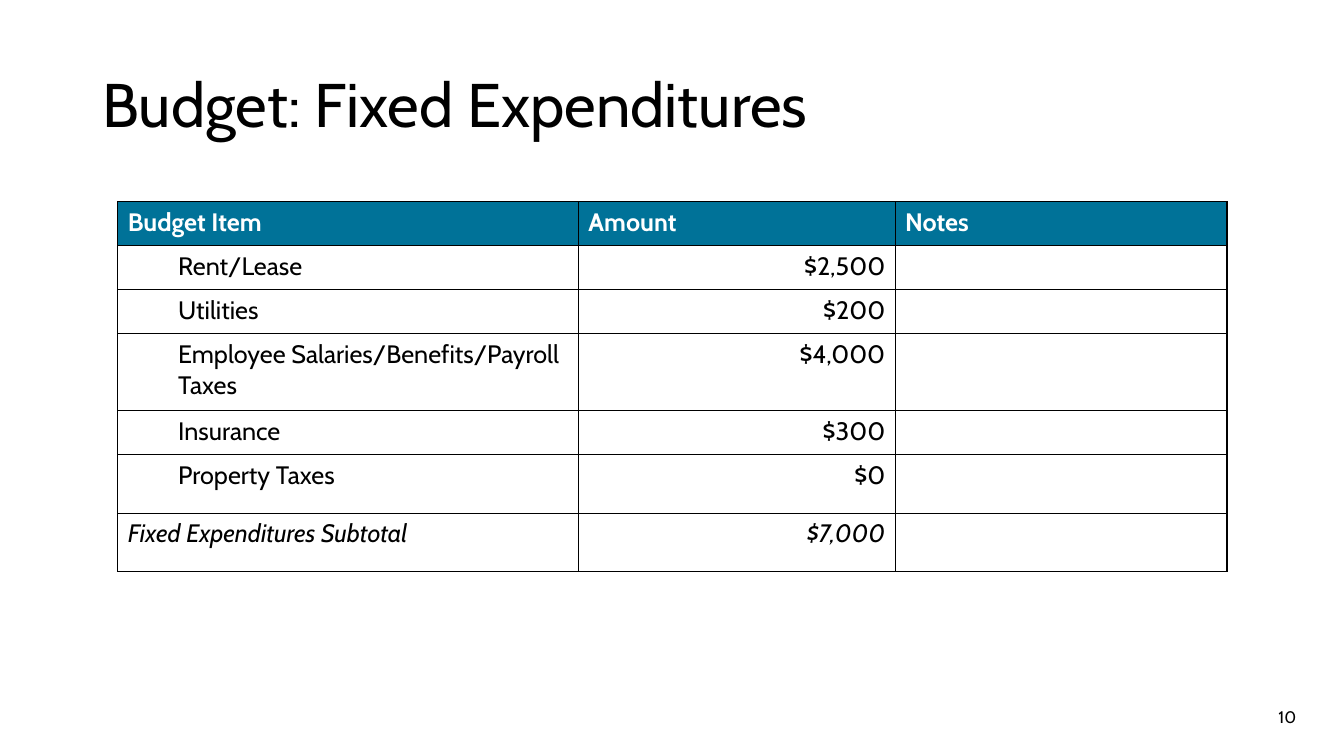
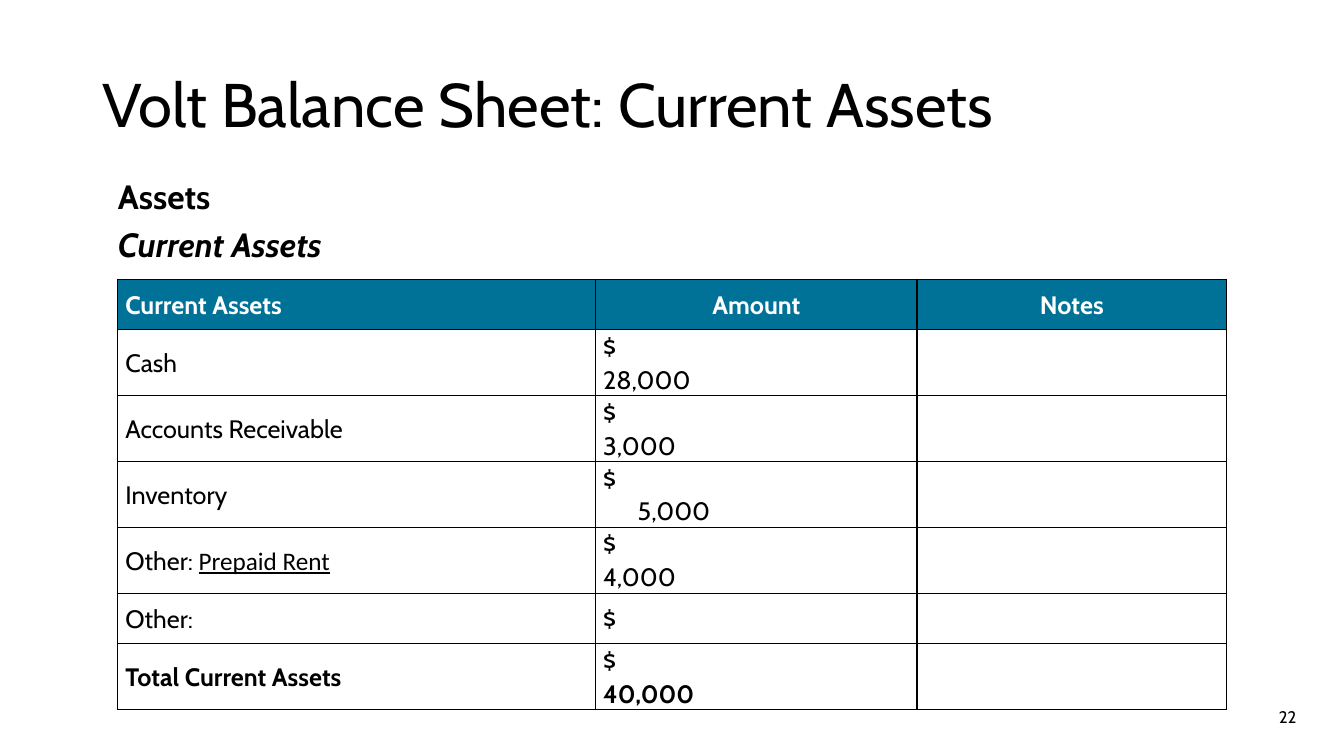
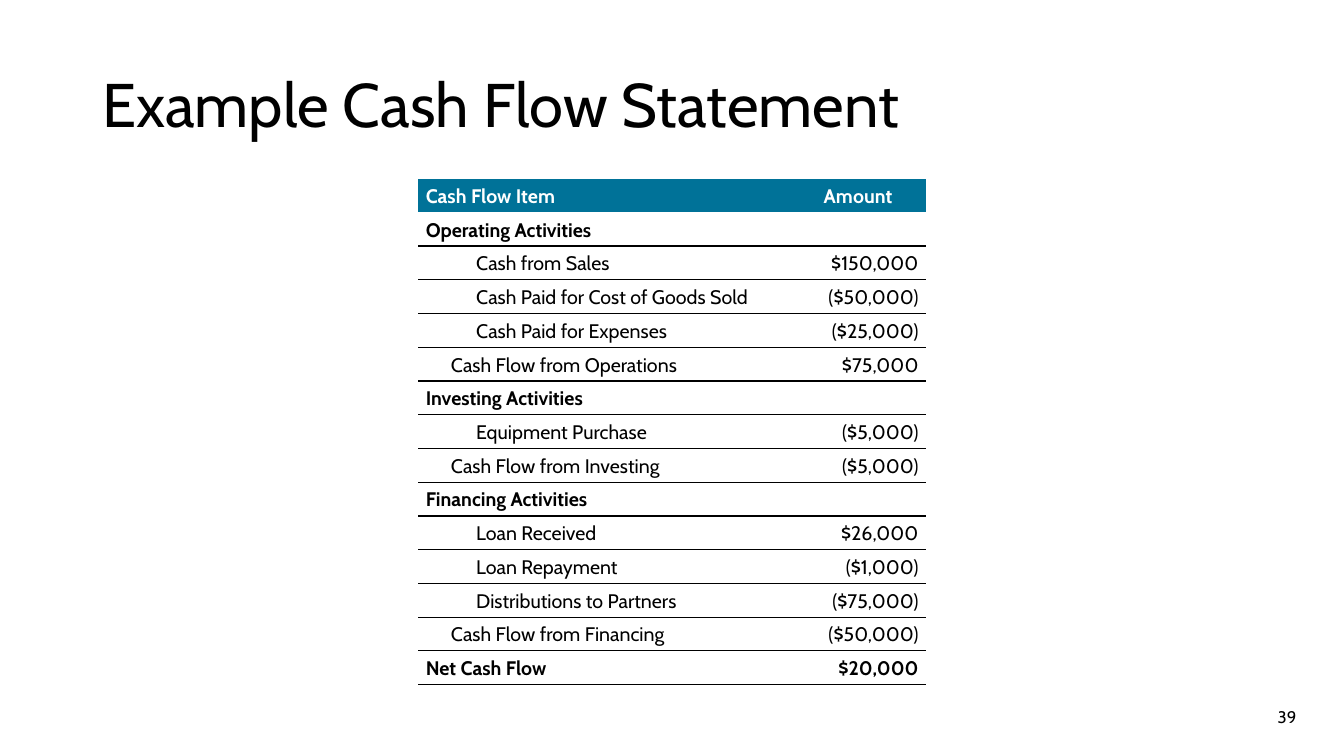
from lxml import etree
from pptx import Presentation
from pptx.dml.color import RGBColor
from pptx.enum.text import MSO_ANCHOR, MSO_AUTO_SIZE, PP_ALIGN
from pptx.oxml.ns import qn
from pptx.util import Cm, Pt

LEFT, CENTER, RIGHT = PP_ALIGN.LEFT, PP_ALIGN.CENTER, PP_ALIGN.RIGHT
TOP, MIDDLE, BOTTOM = MSO_ANCHOR.TOP, MSO_ANCHOR.MIDDLE, MSO_ANCHOR.BOTTOM
GROW = MSO_AUTO_SIZE.SHAPE_TO_FIT_TEXT

FONT = "Cabin"
BLACK, WHITE, TEAL = "000000", "FFFFFF", "007298"
BOLD, ITALIC = {"bold": True}, {"italic": True}
BREAK = "\n"
EDGES = ("lnL", "lnR", "lnT", "lnB")
STEP = 0.635  # one indent level, cm

ROOMY = {"margins": (0.25, 0.13), "anchor": TOP, "paragraph": {}}
COMPACT = {
    "margins": (0.19, 0),
    "anchor": MIDDLE,
    "paragraph": {"line_spacing": 1.07, "space_after": Pt(4)},
}


def rgb(value):
    return RGBColor.from_string(value)


def set_all(target, values):
    for name, value in values.items():
        setattr(target, name, value)


def indent(paragraph, left, first_line=0):
    properties = paragraph._p.get_or_add_pPr()
    properties.set("marL", str(Cm(left)))
    properties.set("indent", str(Cm(first_line)))


def write(paragraph, runs, size, color=BLACK, font=None, **layout):
    """Fill a paragraph with runs: plain strings or (string, font values) pairs."""
    set_all(paragraph, layout)
    for item in [runs] if isinstance(runs, str) else runs:
        text, changes = (item, {}) if isinstance(item, str) else item
        if text == BREAK:
            paragraph.add_line_break()
            continue
        run = paragraph.add_run()
        run.text = text
        set_all(run.font, {"name": FONT, "size": Pt(size), **(font or {}), **changes})
        run.font.color.rgb = rgb(color)


def add_text_box(slide, box, anchor=TOP):
    frame = slide.shapes.add_textbox(*map(Cm, box)).text_frame
    set_all(frame, {"word_wrap": True, "vertical_anchor": anchor})
    return frame


def add_titled_slide(deck, title, number):
    slide = deck.slides.add_slide(deck.slide_layouts[6])
    heading = add_text_box(slide, (2.33, 0, 29.21, 3.68), BOTTOM)
    write(heading.paragraphs[0], title, 44, line_spacing=0.9)
    footer = add_text_box(slide, (25.3, 17.55, 7.62, 1.02), MIDDLE)
    write(footer.paragraphs[0], number, 12, alignment=RIGHT)
    return slide


def set_borders(cell, visible):
    properties = cell._tc.get_or_add_tcPr()
    for edge in EDGES:
        line = etree.SubElement(properties, qn(f"a:{edge}"), w=str(Pt(1)))
        if edge in visible:
            fill = etree.SubElement(line, qn("a:solidFill"))
            etree.SubElement(fill, qn("a:srgbClr"), val=BLACK)
        else:
            etree.SubElement(line, qn("a:noFill"))


def add_grid(slide, left, top, widths, heights):
    grid = slide.shapes.add_table(
        len(heights), len(widths), Cm(left), Cm(top), Cm(sum(widths)), Cm(sum(heights))
    ).table
    grid.horz_banding = False
    for column, width in zip(grid.columns, widths):
        column.width = Cm(width)
    for row, height in zip(grid.rows, heights):
        row.height = Cm(height)
    return grid


def fill_cell(cell, runs, style, size, fill=WHITE, borders=EDGES, **text):
    set_borders(cell, borders)
    cell.fill.solid()
    cell.fill.fore_color.rgb = rgb(fill)
    side, vertical = map(Cm, style["margins"])
    set_all(cell, {
        "margin_left": side, "margin_right": side,
        "margin_top": vertical, "margin_bottom": vertical,
        "vertical_anchor": style["anchor"],
    })
    paragraph = cell.text_frame.paragraphs[0]
    write(paragraph, runs, size, **style["paragraph"], **text)
    if not runs:
        etree.SubElement(paragraph._p, qn("a:endParaRPr"), sz=str(size * 100))
    return paragraph


def fill_header(grid, labels, alignments, style, size, borders=EDGES):
    for column, (label, alignment) in enumerate(zip(labels, alignments)):
        fill_cell(grid.cell(0, column), label, style, size, TEAL, borders,
                  color=WHITE, font=BOLD, alignment=alignment)


def build_budget(deck):
    slide = add_titled_slide(deck, "Budget: Fixed Expenditures", "10")
    expenditures = [
        ("Rent/Lease", "$2,500", 2, {}),
        ("Utilities", "$200", 2, {}),
        ("Employee Salaries/Benefits/Payroll Taxes", "$4,000", 2, {}),
        ("Insurance", "$300", 2, {}),
        ("Property Taxes", "$0", 2, {}),
        ("Fixed Expenditures Subtotal", "$7,000", 0, ITALIC),
    ]
    grid = add_grid(slide, 2.97, 5.08, (11.61, 7.98, 8.36),
                    (1.11, 1.11, 1.11, 1.94, 1.11, 1.47, 1.47))
    fill_header(grid, ("Budget Item", "Amount", "Notes"), (LEFT,) * 3, ROOMY, 18)
    for row, (item, amount, level, font) in enumerate(expenditures, 1):
        label = fill_cell(grid.cell(row, 0), item, ROOMY, 18, font=font)
        indent(label, level * STEP)
        fill_cell(grid.cell(row, 1), amount, ROOMY, 18, font=font, alignment=RIGHT)
        fill_cell(grid.cell(row, 2), "", ROOMY, 18)


def build_balance_sheet(deck):
    slide = add_titled_slide(deck, "Volt Balance Sheet: Current Assets", "22")
    prepaid = ("Prepaid Rent", {"name": "Calibri", "underline": True})
    assets = [
        ("Cash", "28,000", 0, {}),
        ("Accounts Receivable", "3,000", 0, {}),
        ("Inventory", "5,000", 0.87, {}),
        (["Other: ", prepaid], "4,000", 0, {}),
        ("Other:", "", 0, {}),
        ("Total Current Assets", "40,000", 0, BOLD),
    ]
    heights = [1.27] + [1.66 if amount else 1.27 for _, amount, _, _ in assets]
    grid = add_grid(slide, 2.97, 7.04, (12.04, 8.1, 7.8), heights)
    fill_header(grid, ("Current Assets", "Amount", "Notes"),
                (LEFT, CENTER, CENTER), COMPACT, 18)
    for row, (asset, amount, hanging, font) in enumerate(assets, 1):
        fill_cell(grid.cell(row, 0), asset, COMPACT, 18, font=font)
        runs = ["$", BREAK, (amount, font)] if amount else "$"
        value = fill_cell(grid.cell(row, 1), runs, COMPACT, 18)
        indent(value, hanging, -hanging)
        fill_cell(grid.cell(row, 2), "", COMPACT, 18)

    headings = add_text_box(slide, (2.72, 4.32, 7.54, 2.49))
    headings.auto_size = GROW
    write(headings.paragraphs[0], "Assets", 24, font=BOLD, space_after=Pt(5))
    write(headings.add_paragraph(), "Current Assets", 24, font={**BOLD, **ITALIC})


def build_cash_flow(deck):
    slide = add_titled_slide(deck, "Example Cash Flow Statement", "39")
    cash_flows = [
        ("Operating Activities", "", 0),
        ("Cash from Sales", "$150,000", 2),
        ("Cash Paid for Cost of Goods Sold", "($50,000)", 2),
        ("Cash Paid for Expenses", "($25,000)", 2),
        ("Cash Flow from Operations", "$75,000", 1),
        ("Investing Activities", "", 0),
        ("Equipment Purchase", "($5,000)", 2),
        ("Cash Flow from Investing", "($5,000)", 1),
        ("Financing Activities", "", 0),
        ("Loan Received", "$26,000", 2),
        ("Loan Repayment", "($1,000)", 2),
        ("Distributions to Partners", "($75,000)", 2),
        ("Cash Flow from Financing", "($50,000)", 1),
        ("Net Cash Flow", "$20,000", 0),
    ]
    grid = add_grid(slide, 10.54, 4.5, (9.37, 3.43), [0.85] * (len(cash_flows) + 1))
    fill_header(grid, ("Cash Flow Item", "Amount"), (LEFT, CENTER), COMPACT, 14, ())
    for row, (item, amount, level) in enumerate(cash_flows, 1):
        edges = ("lnB",) if row == 1 else ("lnT", "lnB")
        font = {} if level else BOLD
        label = fill_cell(grid.cell(row, 0), item, COMPACT, 14, borders=edges, font=font)
        indent(label, level * 2 * STEP / 2)
        fill_cell(grid.cell(row, 1), amount, COMPACT, 14, borders=edges,
                  font=font, alignment=RIGHT)


def main():
    deck = Presentation()
    deck.slide_width, deck.slide_height = Cm(33.87), Cm(19.05)
    build_budget(deck)
    build_balance_sheet(deck)
    build_cash_flow(deck)
    deck.save("out.pptx")


if __name__ == "__main__":
    main()
